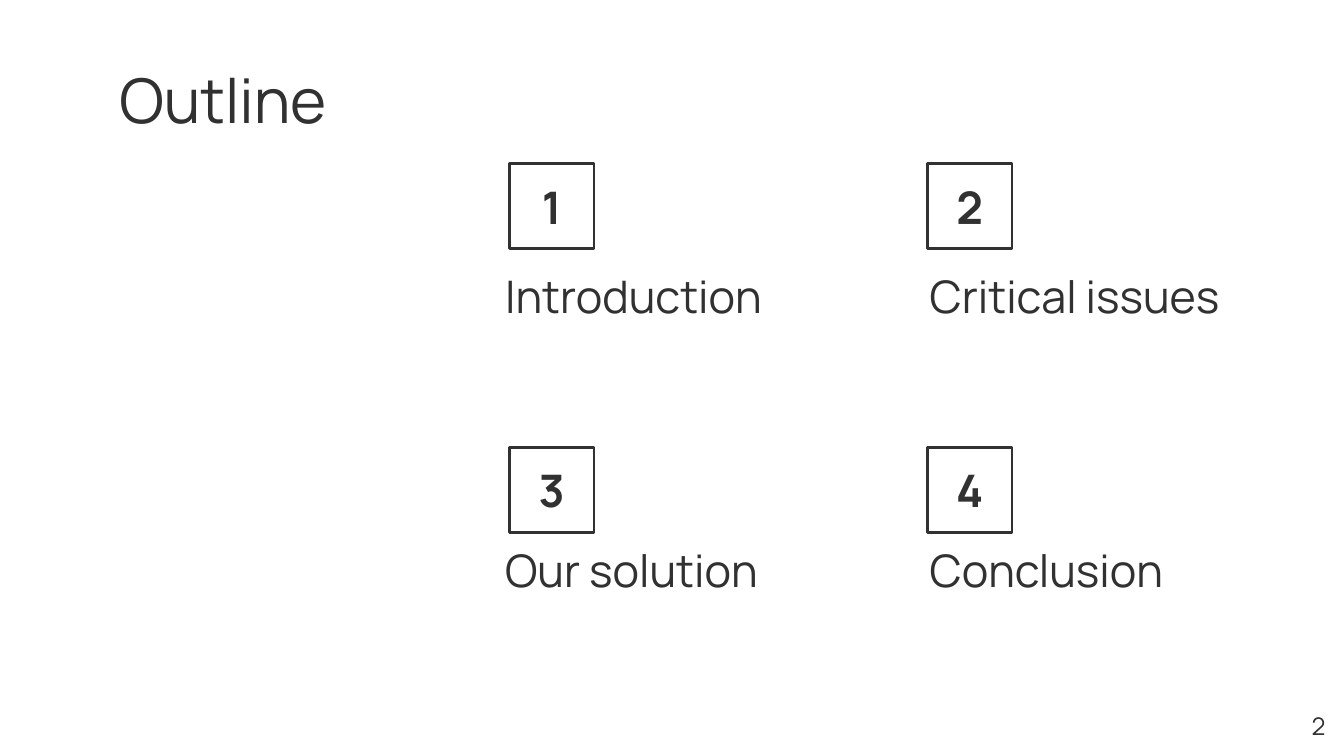
from dataclasses import dataclass

from pptx import Presentation
from pptx.dml.color import RGBColor
from pptx.enum.shapes import MSO_SHAPE as Shape
from pptx.enum.text import MSO_ANCHOR as Anchor, PP_ALIGN as Align
from pptx.util import Pt


@dataclass(frozen=True)
class Theme:
    """Colours, typeface and sizes of the deck."""
    ink: RGBColor = RGBColor(0x31, 0x31, 0x31)
    paper: RGBColor = RGBColor(0xFF, 0xFF, 0xFF)
    font: str = "Manrope"
    title: float = 33
    item: float = 24
    folio: float = 13
    line: float = 1.5
    inset: float = 7.2


@dataclass(frozen=True)
class Box:
    """A rectangle in points."""
    left: float
    top: float
    width: float
    height: float

    def lengths(self):
        """Return the four sides as slide lengths."""
        return [Pt(side) for side in (self.left, self.top, self.width, self.height)]


THEME = Theme()
COLUMNS = ((272.9, -9.4), (496.8, -5.8))
ROWS = ((87.8, 70.6), (239.8, 65.5))
SQUARE = 45.4
ITEMS = (
    ("Introduction", 174.2, 41.8),
    ("Critical issues", 200.2, 73.4),
    ("Our solution", 169.9, 41.8),
    ("Conclusion", 174.2, 41.8),
)


def set_text(shape, text, size, align=Align.LEFT, anchor=Anchor.MIDDLE, bold=False):
    """Write one formatted line into a shape."""
    frame = shape.text_frame
    inset = Pt(THEME.inset)
    frame_format = {
        "word_wrap": True, "vertical_anchor": anchor,
        "margin_left": inset, "margin_top": inset,
        "margin_right": inset, "margin_bottom": inset,
    }
    for name, value in frame_format.items():
        setattr(frame, name, value)
    para = frame.paragraphs[0]
    para.alignment = align
    span = para.add_run()
    span.text = text
    for name, value in {"name": THEME.font, "size": Pt(size), "bold": bold}.items():
        setattr(span.font, name, value)
    span.font.color.rgb = THEME.ink


def add_text(page, box, text, size, **style):
    """Place a text box."""
    set_text(page.shapes.add_textbox(*box.lengths()), text, size, **style)


def add_number(page, box, number):
    """Place an outlined square holding a bold number."""
    square = page.shapes.add_shape(Shape.RECTANGLE, *box.lengths())
    square.shadow.inherit = False
    square.fill.background()
    square.line.color.rgb = THEME.ink
    square.line.width = Pt(THEME.line)
    set_text(square, str(number), THEME.item, align=Align.CENTER, bold=True)


def add_item(page, box, number, label, shift, middle):
    """Place a number square at the box corner and its label below."""
    add_number(page, Box(box.left, box.top, SQUARE, SQUARE), number)
    label_top = box.top + middle - box.height / 2
    label_box = Box(box.left + shift, label_top, box.width, box.height)
    add_text(page, label_box, label, THEME.item)


def add_outline(page):
    """Place the outline items in a grid of two columns."""
    for index, (label, width, height) in enumerate(ITEMS):
        row, column = divmod(index, len(COLUMNS))
        left, shift = COLUMNS[column]
        top, middle = ROWS[row]
        add_item(page, Box(left, top, width, height), index + 1, label, shift, middle)


def main():
    """Build and save the deck."""
    deck = Presentation()
    deck.slide_width, deck.slide_height = Pt(720), Pt(405)
    page = deck.slides.add_slide(deck.slide_layouts[6])
    page.background.fill.solid()
    page.background.fill.fore_color.rgb = THEME.paper
    add_text(page, Box(56.9, 30.2, 499.7, 45.4), "Outline", THEME.title)
    add_outline(page)
    add_text(page, Box(673.9, 373.7, 43.2, 31), "2", THEME.folio,
             align=Align.RIGHT, anchor=Anchor.TOP)
    deck.save("out.pptx")


if __name__ == "__main__":
    main()
